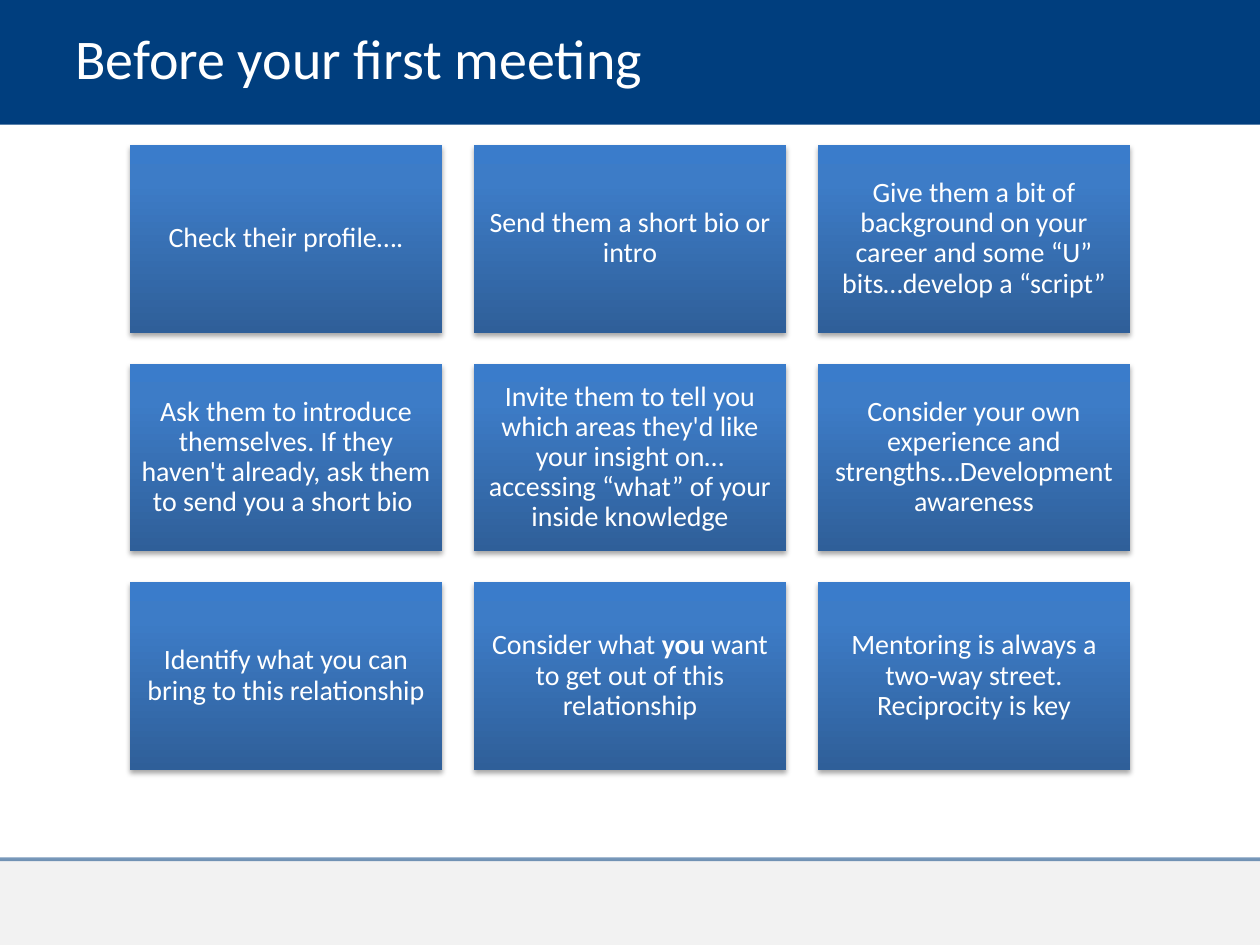
"""Build the slide on what to do before a first mentoring meeting."""
from typing import NamedTuple

from lxml import etree
from pptx import Presentation
from pptx import util as u
from pptx.dml import color as col
from pptx.enum import shapes as sh
from pptx.enum import text as tx
from pptx.oxml import ns

NAVY, GREY, WHITE = "003E7E", "808080", "FFFFFF"
BLEND = ((0, "2F5F99"), (80, "3D7CC7"), (100, "3A7CCB"))


class Box(NamedTuple):
    left: float
    top: float
    width: float
    height: float

    def spans(self) -> list:
        return [u.Inches(v) for v in self]


class Run(NamedTuple):
    text: str
    bold: bool = False


FIRST = Box(1.03, 1.15, 2.48, 1.49)
LAST = Box(6.49, 4.62, 2.48, 1.49)
COLS = 3
TIPS = (
    (Run("Check their profile…."),),
    (Run("Send them a short bio or intro"),),
    (Run("Give them a bit of background on your career and some “U” bits…develop a “script”"),),
    (Run("Ask them to introduce themselves. If they haven't already, ask them to send you a short bio "),),
    (Run("Invite them to tell you which areas they'd like your insight on…accessing “what” of your inside knowledge"),),
    (Run("Consider your own experience and strengths…Development awareness"),),
    (Run("Identify what you can bring to this relationship"),),
    (Run("Consider what "), Run("you", True), Run(" want to get out of this relationship")),
    (Run("Mentoring is always a two-way street. Reciprocity is key"),),
)


def paint(code: str) -> col.RGBColor:
    return col.RGBColor.from_string(code)


def node(root, tag: str, **attrs):
    return etree.SubElement(root, ns.qn(tag), {k: str(v) for k, v in attrs.items()})


def fade(item, percent: int) -> None:
    for hue in item._element.spPr.iter(ns.qn("a:srgbClr")):
        node(hue, "a:alpha", val=percent * 1000)


def write(shape, runs, size=16, align=tx.PP_ALIGN.CENTER, inset=(0.07, 0.07)) -> None:
    frame = shape.text_frame
    frame.word_wrap = True
    frame.vertical_anchor = tx.MSO_ANCHOR.MIDDLE
    frame.margin_left = frame.margin_right = u.Inches(inset[0])
    frame.margin_top = frame.margin_bottom = u.Inches(inset[1])
    para = frame.paragraphs[0]
    para.alignment = align
    para.line_spacing = 0.9
    for part in runs:
        run = para.add_run()
        run.text = part.text
        font = run.font
        font.name, font.size, font.bold = "Calibri", u.Pt(size), part.bold
        font.color.rgb = paint(WHITE)


def block(slide, box: Box, fill: str = ""):
    shape = slide.shapes.add_shape(sh.MSO_SHAPE.RECTANGLE, *box.spans())
    shape.shadow.inherit = False
    shape.line.fill.background()
    if fill:
        shape.fill.solid()
        shape.fill.fore_color.rgb = paint(fill)
    return shape


def card(slide, box: Box, runs) -> None:
    shape = block(slide, box)
    shape.fill.gradient()
    shape.fill.gradient_angle = 90
    props = shape._element.spPr
    stops = props.find(".//" + ns.qn("a:gsLst"))
    for old in list(stops):
        stops.remove(old)
    for place, code in BLEND:
        node(node(stops, "a:gs", pos=place * 1000), "a:srgbClr", val=code)
    shade = node(props.find(ns.qn("a:effectLst")), "a:outerShdw", blurRad=u.Pt(3.1),
                 dist=u.Pt(1.8), dir=90 * 60000, rotWithShape=0)
    node(node(shade, "a:srgbClr", val="000000"), "a:alpha", val=35000)
    write(shape, runs)


def rule(slide, top: float) -> None:
    line = slide.shapes.add_connector(sh.MSO_CONNECTOR.STRAIGHT, 0, u.Inches(top),
                                      u.Inches(10), u.Inches(top))
    line.line.width = u.Pt(2.25)
    line.line.color.rgb = paint(NAVY)
    fade(line, 52)
    node(line._element.spPr, "a:effectLst")


def main() -> None:
    deck = Presentation()
    deck.slide_width, deck.slide_height = u.Inches(10), u.Inches(7.5)
    slide = deck.slides.add_slide(deck.slide_layouts[6])
    block(slide, Box(0, 0, 10, 0.99), NAVY)
    fade(block(slide, Box(0, 6.82, 10, 0.68), GREY), 10)
    rule(slide, 6.82)
    title = slide.shapes.add_textbox(*Box(0.5, 0.14, 6.94, 0.69).spans())
    write(title, [Run("Before your first meeting")], size=32,
          align=tx.PP_ALIGN.LEFT, inset=(0.1, 0.05))
    across = (LAST.left - FIRST.left) / (COLS - 1)
    down = (LAST.top - FIRST.top) / (len(TIPS) // COLS - 1)
    for i, runs in enumerate(TIPS):
        row, place = divmod(i, COLS)
        card(slide, FIRST._replace(left=FIRST.left + place * across,
                                   top=FIRST.top + row * down), runs)
    deck.save("out.pptx")


if __name__ == "__main__":
    main()
